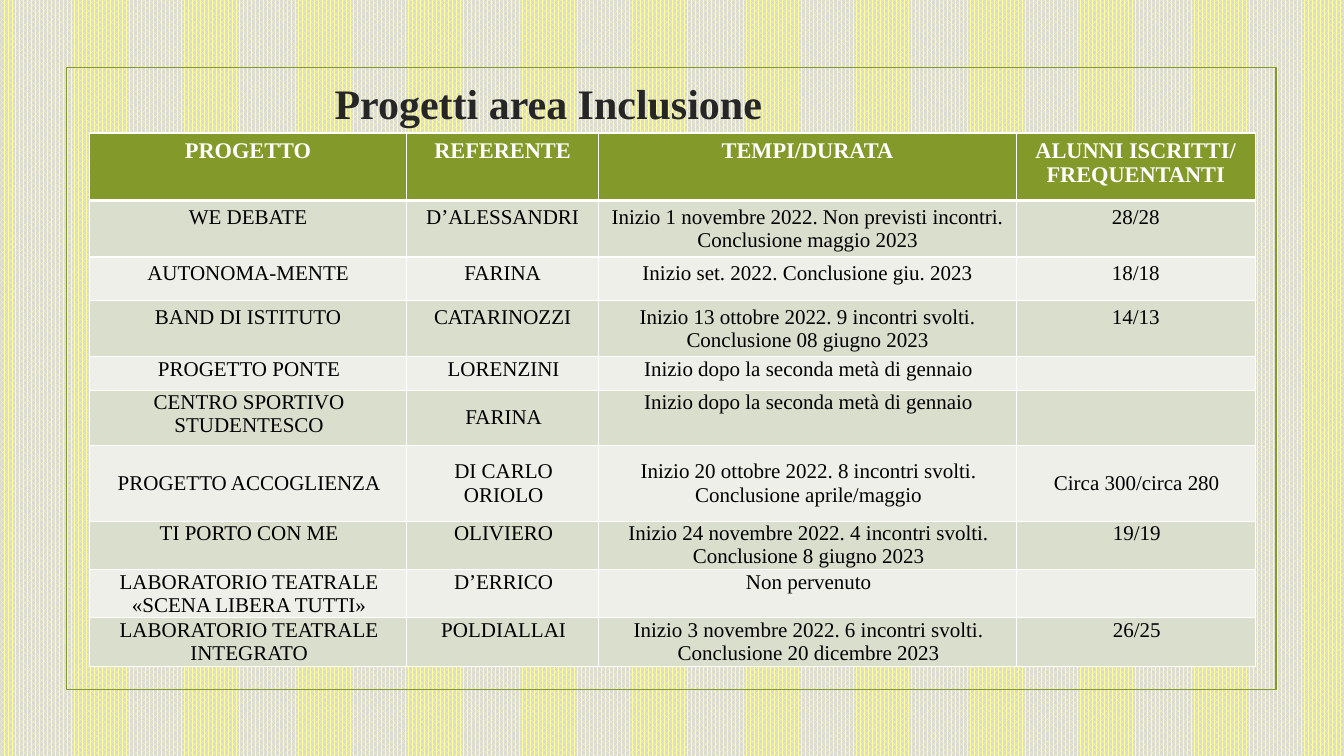
"""Build the slide listing the school's inclusion projects."""
from lxml.etree import SubElement
from pptx import Presentation
from pptx.dml.color import RGBColor
from pptx.enum.dml import MSO_PATTERN
from pptx.enum.shapes import MSO_SHAPE
from pptx.enum.text import MSO_ANCHOR, PP_ALIGN
from pptx.oxml.ns import qn
from pptx.util import Inches, Pt

TITLE = "Progetti area Inclusione"
ROWS = [
    ("PROGETTO", "REFERENTE", "TEMPI/DURATA", "ALUNNI ISCRITTI/\nFREQUENTANTI"),
    ("WE DEBATE", "D’ALESSANDRI",
     "Inizio 1 novembre 2022. Non previsti incontri. Conclusione maggio 2023", "28/28"),
    ("AUTONOMA-MENTE", "FARINA", "Inizio set. 2022. Conclusione giu. 2023", "18/18"),
    ("BAND DI ISTITUTO", "CATARINOZZI",
     "Inizio 13 ottobre 2022. 9 incontri svolti. Conclusione 08 giugno 2023", "14/13"),
    ("PROGETTO PONTE", "LORENZINI", "Inizio dopo la seconda metà di gennaio", ""),
    ("CENTRO SPORTIVO STUDENTESCO", "FARINA", "Inizio dopo la seconda metà di gennaio", ""),
    ("PROGETTO ACCOGLIENZA", "DI CARLO\nORIOLO",
     "Inizio 20 ottobre 2022. 8 incontri svolti. Conclusione aprile/maggio",
     "Circa 300/circa 280"),
    ("TI PORTO CON ME", "OLIVIERO",
     "Inizio 24 novembre 2022. 4 incontri svolti. Conclusione 8 giugno 2023", "19/19"),
    ("LABORATORIO TEATRALE «SCENA LIBERA TUTTI»", "D’ERRICO", "Non pervenuto", ""),
    ("LABORATORIO TEATRALE INTEGRATO", "POLDIALLAI",
     "Inizio 3 novembre 2022. 6 incontri svolti. Conclusione 20 dicembre 2023", "26/25"),
]
COLUMN_WIDTHS = [3.14, 1.91, 4.14, 2.37]
ROW_HEIGHTS = [0.67, 0.56, 0.43, 0.56, 0.33, 0.55, 0.75, 0.48, 0.48, 0.48]
MIDDLE_CELLS = {(5, 1), (6, 0), (6, 1), (6, 2), (6, 3)}
FIRST_TIGHT_ROW = 4
FONT = "Times New Roman"
COLORS = {
    "yellow": "FFFF99", "grey": "D9D9D9", "green": "83992A", "title": "262626",
    "white": "FFFFFF", "black": "000000", "odd": "D9DECD", "even": "EDEFE8",
}


def color(name):
    return RGBColor.from_string(COLORS[name])


def style_paragraph(para, size, color_name, bold):
    para.alignment = PP_ALIGN.CENTER
    for font in [para.font] + [span.font for span in para.runs]:
        font.name, font.size, font.bold = FONT, Pt(size), bold
        font.color.rgb = color(color_name)


def add_border(cell, side, width):
    line = SubElement(cell._tc.get_or_add_tcPr(), qn(f"a:ln{side}"), w=str(Pt(width)))
    fill = SubElement(line, qn("a:solidFill"))
    SubElement(fill, qn("a:srgbClr"), val=COLORS["white"])


def format_cell(cell, row, column):
    header = row == 0
    for side in "LRTB":
        thick = (row, side) in {(0, "B"), (1, "T")}
        add_border(cell, side, 3 if thick else 1)
    cell.fill.solid()
    cell.fill.fore_color.rgb = color("green" if header else "odd" if row % 2 else "even")
    if row >= FIRST_TIGHT_ROW:
        cell.margin_left, cell.margin_right = Inches(0.04), Inches(0.02)
        cell.margin_top = cell.margin_bottom = Inches(0.01)
    middle = (row, column) in MIDDLE_CELLS
    cell.vertical_anchor = MSO_ANCHOR.MIDDLE if middle else MSO_ANCHOR.TOP
    cell.text_frame.text = ROWS[row][column]
    for para in cell.text_frame.paragraphs:
        style_paragraph(para, 16 if header else 15, "white" if header else "black", header)


def add_frame(page):
    frame = page.shapes.add_shape(
        MSO_SHAPE.RECTANGLE, Inches(0.66), Inches(0.67), Inches(12), Inches(6.17))
    frame.shadow.inherit = False
    frame.fill.background()
    frame.line.color.rgb = color("green")
    frame.line.width = Pt(1.25)


def add_title(page):
    title = page.shapes.title
    title.left, title.top = Inches(0.74), Inches(0.67)
    title.width, title.height = Inches(9.4), Inches(0.7)
    title.text_frame.text = TITLE
    title.text_frame.vertical_anchor = MSO_ANCHOR.MIDDLE
    style_paragraph(title.text_frame.paragraphs[0], 30, "title", True)


def add_projects(page):
    table = page.shapes.add_table(
        len(ROWS), len(COLUMN_WIDTHS), Inches(0.89), Inches(1.32),
        Inches(sum(COLUMN_WIDTHS)), Inches(sum(ROW_HEIGHTS))).table
    for column, width in zip(table.columns, COLUMN_WIDTHS):
        column.width = Inches(width)
    for row, height in zip(table.rows, ROW_HEIGHTS):
        row.height = Inches(height)
    for row in range(len(ROWS)):
        for column in range(len(COLUMN_WIDTHS)):
            format_cell(table.cell(row, column), row, column)


def main():
    deck = Presentation()
    deck.slide_width, deck.slide_height = Inches(13.33), Inches(7.5)
    page = deck.slides.add_slide(deck.slide_layouts[5])
    backdrop = page.background.fill
    backdrop.patterned()
    backdrop.pattern = MSO_PATTERN.PERCENT_75
    backdrop.fore_color.rgb = color("yellow")
    backdrop.back_color.rgb = color("grey")
    add_frame(page)
    add_title(page)
    add_projects(page)
    deck.save("out.pptx")


if __name__ == "__main__":
    main()
